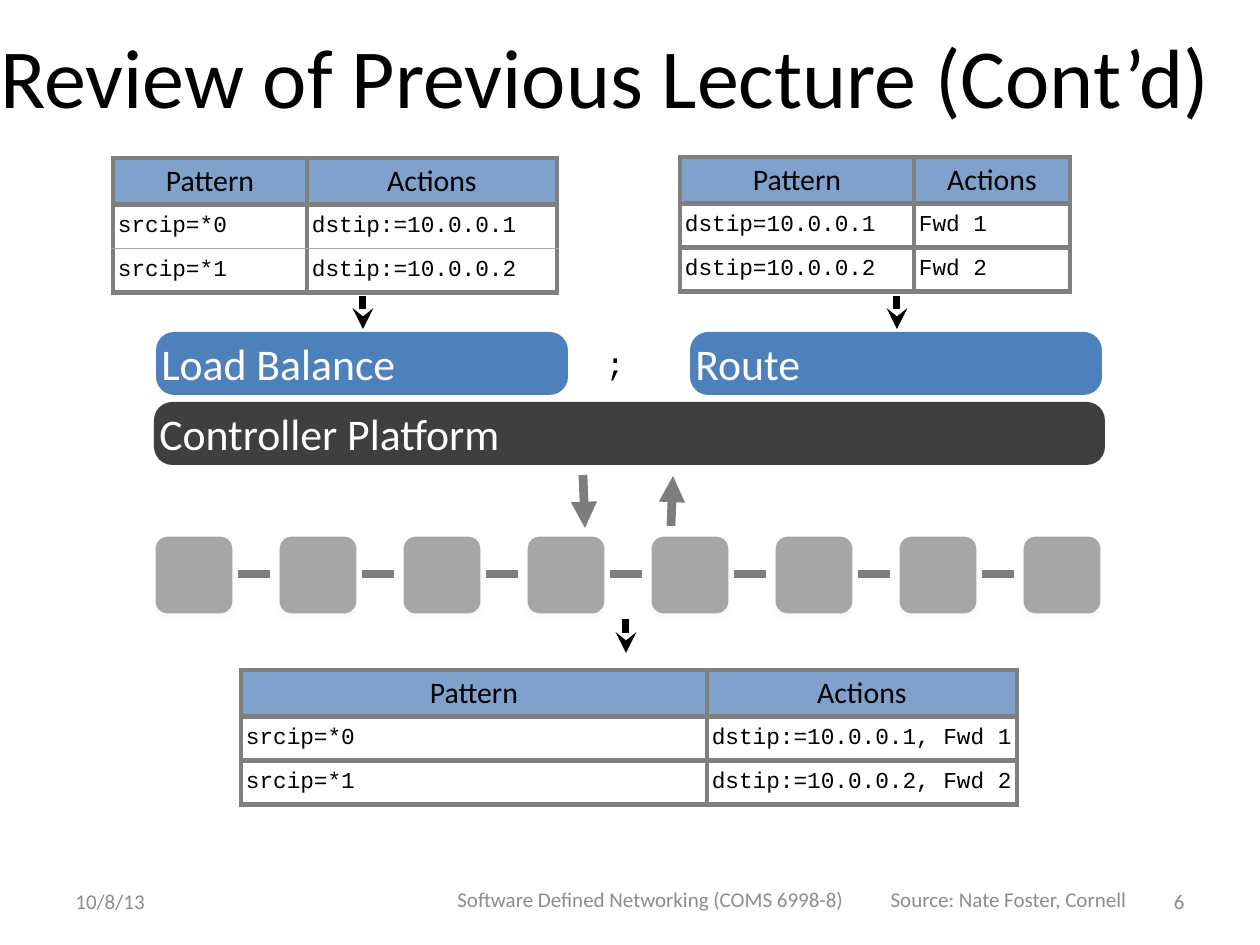
from dataclasses import dataclass

from lxml import etree
from pptx import Presentation
from pptx import util as u
from pptx.dml.color import RGBColor
from pptx.enum import shapes, text
from pptx.oxml import parse_xml
from pptx.oxml.ns import nsdecls, qn

EMU_PER_PX = 914400 / 126
ALIGN = text.PP_ALIGN
ANCHOR = text.MSO_ANCHOR


@dataclass(frozen=True)
class Theme:
    sans: str = "Calibri"
    mono: str = "Courier New"
    black: str = "000000"
    white: str = "FFFFFF"
    header: str = "80A1CB"
    module: str = "4E81BC"
    platform: str = "3F3F3F"
    node: str = "A6A6A6"
    link: str = "7C7E7E"
    border: str = "7F7F7F"
    thin_border: str = "A4A5A4"
    footer: str = "8C8C8C"
    node_shadow: str = "EEECE1"
    title_size: int = 48
    bar_size: int = 25
    operator_size: int = 18
    header_size: int = 17
    rule_size: int = 13
    footer_size: int = 12


@dataclass(frozen=True)
class RuleTable:
    x: int
    y: int
    cols: tuple[int, int]
    rules: tuple[tuple[str, str], ...]
    thin_rules: bool = False


@dataclass(frozen=True)
class Bar:
    label: str
    x: int
    y: int
    w: int
    fill: str
    anchor: ANCHOR


@dataclass(frozen=True)
class Line:
    x1: int
    y1: int
    x2: int
    y2: int
    color: str
    width: int
    tip: str = ""


@dataclass(frozen=True)
class Label:
    content: str
    x: int
    y: int
    w: int
    h: int
    align: ALIGN


T = Theme()
HEADER = ("Pattern", "Actions")
ROW_HEIGHTS = (46, 44, 44)
NODE_COUNT, NODE_X, NODE_Y, NODE_SIZE, PITCH = 8, 160, 541, 68, 124
LINK_X, LINK_Y, LINK_W = 238, 574, 32

TABLES = (
    RuleTable(680, 157, (234, 156), (("dstip=10.0.0.1", "Fwd 1"), ("dstip=10.0.0.2", "Fwd 2"))),
    RuleTable(113, 158, (194, 250), (("srcip=*0", "dstip:=10.0.0.1"), ("srcip=*1", "dstip:=10.0.0.2")), True),
    RuleTable(241, 670, (466, 310), (("srcip=*0", "dstip:=10.0.0.1, Fwd 1"), ("srcip=*1", "dstip:=10.0.0.2, Fwd 2"))),
)
BARS = (
    Bar("Controller Platform", 154, 402, 951, T.platform, ANCHOR.BOTTOM),
    Bar("Load Balance", 156, 332, 412, T.module, ANCHOR.MIDDLE),
    Bar("Route", 690, 332, 412, T.module, ANCHOR.MIDDLE),
)
ARROWS = (
    Line(583, 475, 585, 528, T.link, 5, "triangle"),
    Line(671, 526, 673, 476, T.link, 5, "triangle"),
    Line(897, 296, 897, 329, T.black, 4, "stealth"),
    Line(626, 619, 626, 653, T.black, 4, "stealth"),
    Line(363, 296, 363, 329, T.black, 4, "stealth"),
)
FOOTERS = (
    Label("10/8/13", 63, 876, 294, 50, ALIGN.LEFT),
    Label("Software Defined Networking (COMS 6998-8)", 430, 872, 441, 54, ALIGN.CENTER),
    Label("6", 903, 876, 294, 50, ALIGN.RIGHT),
    Label("Source: Nate Foster, Cornell", 788, 872, 441, 54, ALIGN.CENTER),
)


def px(n: int) -> u.Emu:
    return u.Emu(round(n * EMU_PER_PX))


def box(x: int, y: int, w: int, h: int) -> tuple[u.Emu, ...]:
    return px(x), px(y), px(w), px(h)


def rgb(color: str) -> RGBColor:
    return RGBColor.from_string(color)


def write(tf, content: str, size: int, color: str, font: str = T.sans, align: ALIGN = ALIGN.LEFT) -> None:
    tf.text = content
    p = tf.paragraphs[0]
    p.alignment = align
    f = p.runs[0].font
    f.name, f.size, f.color.rgb = font, u.Pt(size), rgb(color)


def set_margins(frame, margin: int) -> None:
    frame.margin_left = frame.margin_right = px(margin)
    frame.margin_top = frame.margin_bottom = px(margin)


def add_title(slide, content: str) -> None:
    sp = slide.shapes.title
    sp.left, sp.top, sp.width, sp.height = box(0, 13, 1260, 123)
    tf = sp.text_frame
    write(tf, content, T.title_size, T.black)
    set_margins(tf, 0)
    tf.vertical_anchor = ANCHOR.MIDDLE
    tf.auto_size = text.MSO_AUTO_SIZE.NONE


def add_round_rect(slide, x: int, y: int, w: int, h: int, radius: float, fill: str):
    sp = slide.shapes.add_shape(shapes.MSO_SHAPE.ROUNDED_RECTANGLE, *box(x, y, w, h))
    sp.adjustments[0] = radius
    sp.shadow.inherit = False
    sp.fill.solid()
    sp.fill.fore_color.rgb = rgb(fill)
    return sp


def add_bar(slide, bar: Bar) -> None:
    sp = add_round_rect(slide, bar.x, bar.y, bar.w, 63, 0.29, bar.fill)
    sp.line.fill.background()
    tf = sp.text_frame
    write(tf, bar.label, T.bar_size, T.white)
    set_margins(tf, 0)
    tf.vertical_anchor = bar.anchor


def add_node(slide, x: int) -> None:
    sp = add_round_rect(slide, x, NODE_Y, NODE_SIZE, NODE_SIZE, 0.11, T.node)
    sp.line.color.rgb = rgb(T.node)
    sp.line.width = u.Pt(5)
    effects = sp._element.spPr.find(qn("a:effectLst"))
    effects.append(parse_xml(
        f'<a:outerShdw {nsdecls("a")} blurRad="{u.Pt(3)}" dist="{u.Pt(1.6)}" dir="5400000" rotWithShape="0">'
        f'<a:srgbClr val="{T.node_shadow}"><a:alpha val="38000"/></a:srgbClr></a:outerShdw>'))


def add_line(slide, line: Line) -> None:
    c = slide.shapes.add_connector(
        shapes.MSO_CONNECTOR.STRAIGHT, *box(line.x1, line.y1, line.x2, line.y2))
    c.line.color.rgb = rgb(line.color)
    c.line.width = u.Pt(line.width)
    if line.tip:
        etree.SubElement(c.line._get_or_add_ln(), qn("a:tailEnd"), type=line.tip)
    etree.SubElement(c._element.spPr, qn("a:effectLst"))


def set_borders(cell, thin_sides: str) -> None:
    tc_pr = cell._tc.get_or_add_tcPr()
    for side in "LRTB":
        color, width = (T.thin_border, 1) if side in thin_sides else (T.border, 3)
        tc_pr.append(parse_xml(
            f'<a:ln{side} {nsdecls("a")} w="{u.Pt(width)}"><a:solidFill>'
            f'<a:srgbClr val="{color}"/></a:solidFill></a:ln{side}>'))


def add_rule_table(slide, spec_table: RuleTable) -> None:
    t = spec_table
    tbl = slide.shapes.add_table(
        len(ROW_HEIGHTS), len(t.cols), *box(t.x, t.y, sum(t.cols), sum(ROW_HEIGHTS))).table
    tbl.first_row = tbl.horz_banding = False
    for col, width in zip(tbl.columns, t.cols):
        col.width = px(width)
    for row, height in zip(tbl.rows, ROW_HEIGHTS):
        row.height = px(height)
    for i, row in enumerate((HEADER, *t.rules)):
        for j, content in enumerate(row):
            cell = tbl.cell(i, j)
            set_margins(cell, 5)
            cell.vertical_anchor = ANCHOR.MIDDLE
            set_borders(cell, ("", "B", "T")[i] if t.thin_rules else "")
            cell.fill.solid()
            cell.fill.fore_color.rgb = rgb(T.white if i else T.header)
            if i:
                write(cell.text_frame, content, T.rule_size, T.black, T.mono)
            else:
                write(cell.text_frame, content, T.header_size, T.black, align=ALIGN.CENTER)


def add_operator(slide, content: str) -> None:
    tf = slide.shapes.add_textbox(*box(606, 344, 18, 38)).text_frame
    write(tf, content, T.operator_size, T.black, T.mono)
    set_margins(tf, 0)
    tf.vertical_anchor = ANCHOR.MIDDLE
    tf.word_wrap = False


def add_footer(slide, label: Label) -> None:
    tf = slide.shapes.add_textbox(*box(label.x, label.y, label.w, label.h)).text_frame
    tf.word_wrap = True
    tf.vertical_anchor = ANCHOR.MIDDLE
    write(tf, label.content, T.footer_size, T.footer, align=label.align)


def main() -> None:
    prs = Presentation()
    prs.slide_width, prs.slide_height = px(1260), px(945)
    slide = prs.slides.add_slide(prs.slide_layouts[5])
    add_title(slide, "Review of Previous Lecture (Cont’d)")
    for i in range(NODE_COUNT):
        add_node(slide, NODE_X + i * PITCH)
    for i in range(NODE_COUNT - 1):
        x = LINK_X + i * PITCH
        add_line(slide, Line(x, LINK_Y, x + LINK_W, LINK_Y, T.link, 5))
    for bar in BARS:
        add_bar(slide, bar)
    for table in TABLES:
        add_rule_table(slide, table)
    add_operator(slide, ";")
    for arrow in ARROWS:
        add_line(slide, arrow)
    for label in FOOTERS:
        add_footer(slide, label)
    prs.save("out.pptx")


if __name__ == "__main__":
    main()
